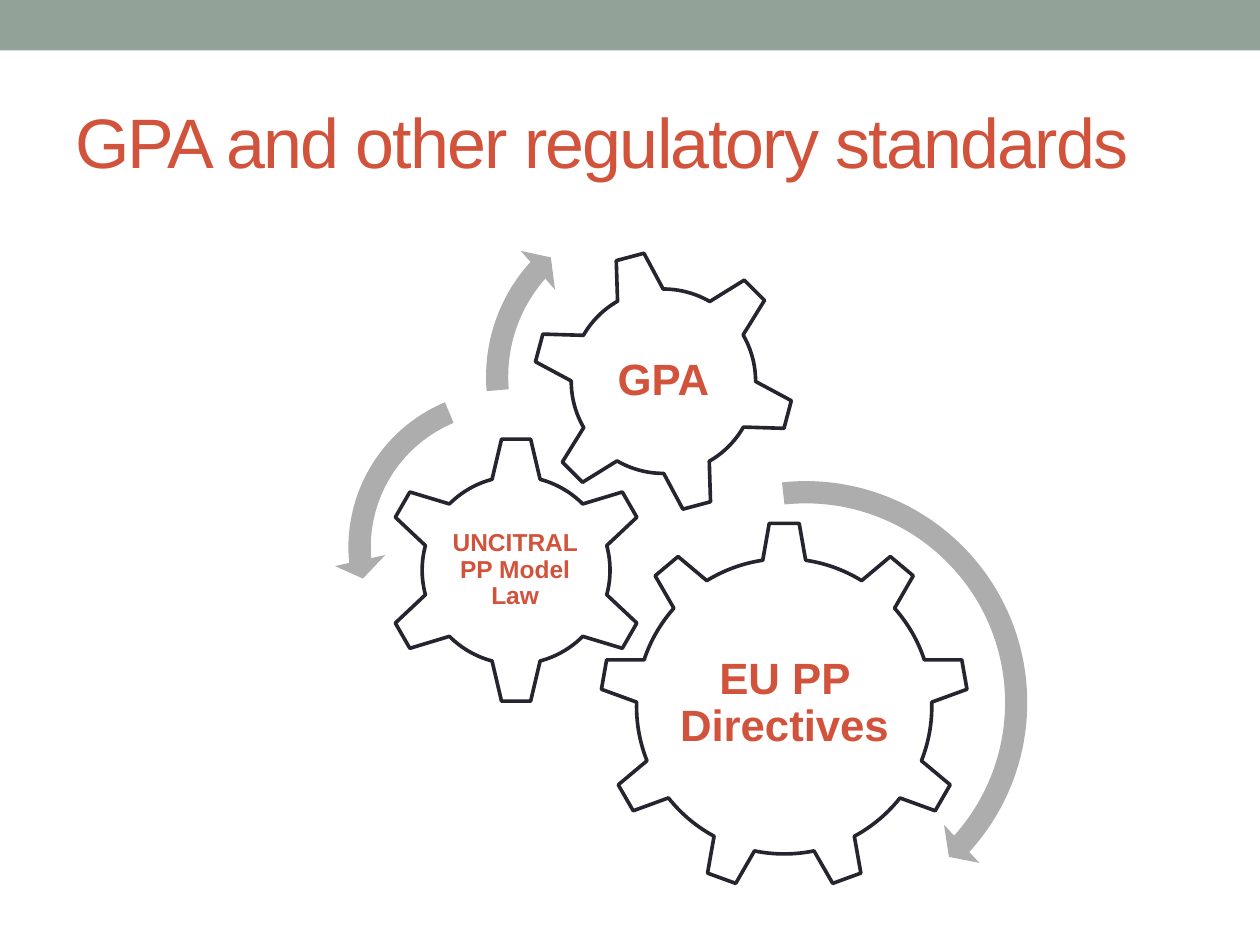
import pptx
import pptx.dml.color
import pptx.enum.shapes
import pptx.enum.text
import pptx.util

Cm = pptx.util.Cm
Pt = pptx.util.Pt
RGBColor = pptx.dml.color.RGBColor
MSO_SHAPE = pptx.enum.shapes.MSO_SHAPE
PP_ALIGN = pptx.enum.text.PP_ALIGN

SAGE = RGBColor(0x93, 0xA2, 0x99)
RUST = RGBColor(0xD2, 0x53, 0x3C)
INK = RGBColor(0x25, 0x25, 0x2F)
GRAY = RGBColor(0xAD, 0xAD, 0xAE)
WHITE = RGBColor(0xFF, 0xFF, 0xFF)

# gear shape, (left, top, size), rotation, label, label box, font size, inset
GEARS = [
    (MSO_SHAPE.GEAR_9, (12.09, 10.52, 7.44), 0,
     "EU PP Directives", (13.59, 12.27, 4.45, 3.84), 25, 0.08),
    (MSO_SHAPE.GEAR_6, (7.7, 8.79, 5.41), 0,
     "UNCITRAL PP Model Law", (9.04, 10.16, 2.69, 2.67), 14, 0.05),
    (MSO_SHAPE.GEAR_6, (10.72, 5.03, 5.31), 345,
     "GPA", (11.89, 6.2, 2.97, 2.97), 25, 0.08),
]

# arrow shape, (left, top, size), band and head widths in percent,
# head, end and start angles in degrees
ARROWS = [
    (MSO_SHAPE.CIRCULAR_ARROW, (11.48, 9.4, 9.53), (4.7, 5.5), (4.98, 42.17, 263.85)),
    (MSO_SHAPE.LEFT_CIRCULAR_ARROW, (6.73, 7.57, 6.93), (6.5, 7.5), (7.17, 174.82, 247.3)),
    (MSO_SHAPE.CIRCULAR_ARROW, (9.5, 3.86, 7.47), (6, 7), (6.57, 221.9, 175.14)),
]


def add_shape(slide, kind, box, fill, line=None):
    s = slide.shapes.add_shape(kind, *map(Cm, box))
    s.shadow.inherit = False
    s.fill.solid()
    s.fill.fore_color.rgb = fill
    if line is None:
        s.line.fill.background()
    else:
        s.line.color.rgb = line
        s.line.width = Pt(2.08)
    return s


def add_text(slide, text, box, size):
    """Add a vertically centred text box and return its text frame."""
    tf = slide.shapes.add_textbox(*map(Cm, box)).text_frame
    tf.word_wrap = True
    tf.vertical_anchor = pptx.enum.text.MSO_ANCHOR.MIDDLE
    tf.text = text
    font = tf.paragraphs[0].runs[0].font
    font.name = "Arial"
    font.size = Pt(size)
    font.color.rgb = RUST
    return tf


def add_title(slide, text):
    tf = add_text(slide, text, (1.27, 1.47, 22.86, 2.74), 40)
    # Tighten the letters by one point
    tf.paragraphs[0].runs[0].font._element.set("spc", "-100")


def add_gear(slide, kind, place, rotation, label, label_box, size, inset):
    left, top, side = place
    s = add_shape(slide, kind, (left, top, side, side), WHITE, INK)
    s.rotation = rotation
    tf = add_text(slide, label, label_box, size)
    tf.margin_left = tf.margin_right = tf.margin_top = tf.margin_bottom = Cm(inset)
    p = tf.paragraphs[0]
    p.alignment = PP_ALIGN.CENTER
    p.line_spacing = 0.9
    p.runs[0].font.bold = True


def add_arc_arrow(slide, kind, place, widths, angles):
    left, top, side = place
    s = add_shape(slide, kind, (left, top, side, side), GRAY)
    band, head = (w / 100 for w in widths)
    # Angles are stored in 60000ths of a degree, adjustments in 100000ths
    values = [band, *(a * 0.6 for a in angles), head]
    for i, value in enumerate(values):
        s.adjustments[i] = value


def main():
    prs = pptx.Presentation()
    prs.slide_width, prs.slide_height = Cm(25.4), Cm(19.05)
    slide = prs.slides.add_slide(prs.slide_layouts[6])
    add_shape(slide, MSO_SHAPE.RECTANGLE, (0, 0, 25.4, 1.02), SAGE)
    add_title(slide, "GPA and other regulatory standards")
    for gear in GEARS:
        add_gear(slide, *gear)
    for arrow in ARROWS:
        add_arc_arrow(slide, *arrow)
    prs.save("out.pptx")


if __name__ == "__main__":
    main()
